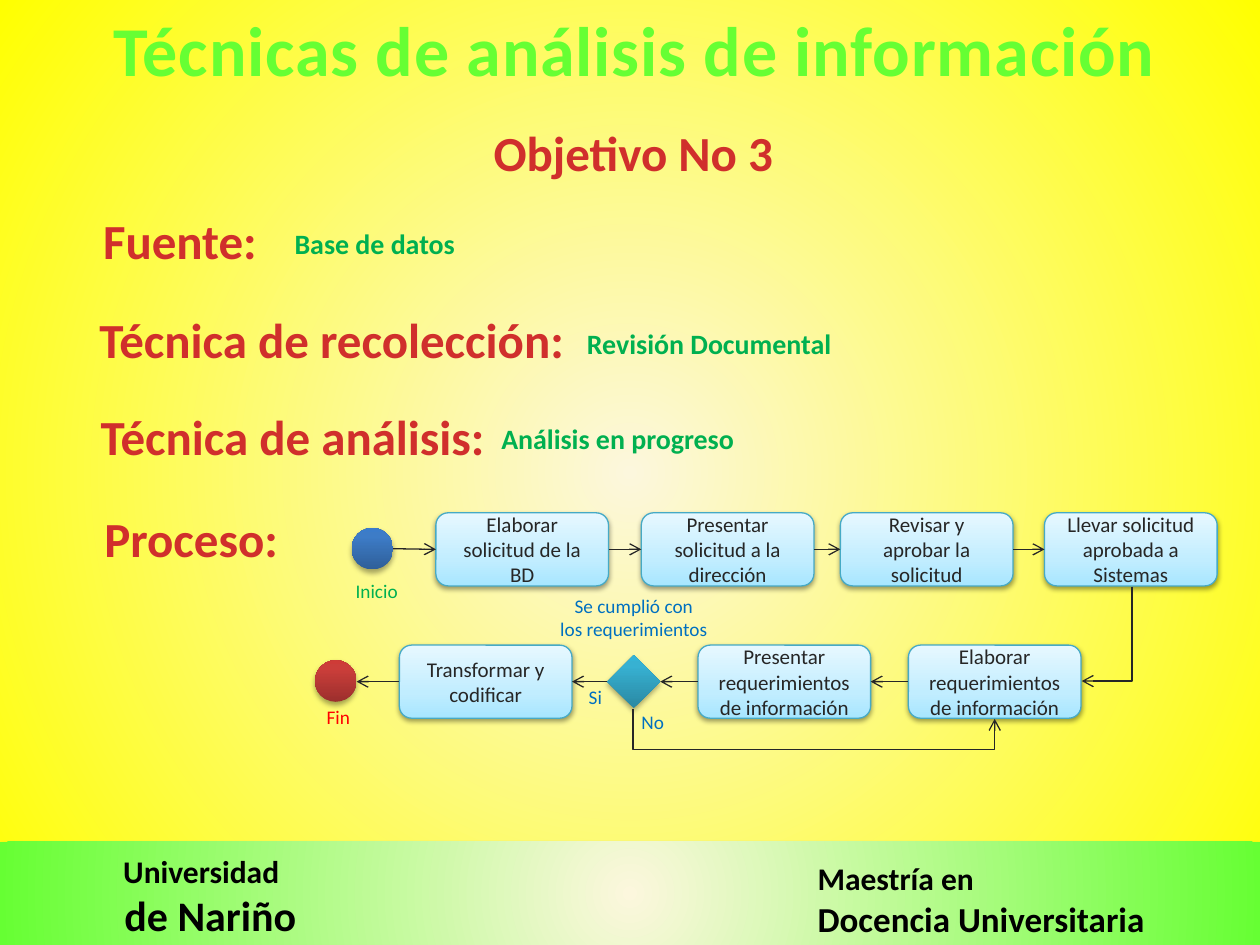
from dataclasses import dataclass

from lxml.etree import SubElement
from pptx import Presentation
from pptx.dml.color import RGBColor
from pptx.enum.shapes import MSO_CONNECTOR, MSO_SHAPE
from pptx.enum.text import MSO_ANCHOR, MSO_AUTO_SIZE, PP_ALIGN
from pptx.oxml.ns import qn
from pptx.util import Inches, Pt

WIDTH, HEIGHT = Inches(10), Inches(7.5)
COLUMNS, ROWS = 100, 75
STEP_SIZE = (13.7, 5.8)
TOP, LEFT, BOTTOM, RIGHT = range(4)


@dataclass(frozen=True)
class Theme:
    """Colours, gradients and type sizes of the slide."""
    font: str = "Calibri"
    title: str = "66FF33"
    heading: str = "D02F2C"
    answer: str = "00B050"
    note: str = "0070C0"
    end: str = "FF0000"
    footer: str = "000000"
    ink: str = "262626"
    border: str = "46AAC5"
    page: tuple = ((0, "FCF7DD"), (100, "FFFF00"))
    band: tuple = ((0, "FCF7DD"), (100, "66FF33"))
    step: tuple = ((0, "A7E6FF"), (35, "C1EDFF"), (100, "E7F8FF"))
    start_fill: tuple = ((0, "2F5F99"), (80, "3D7CC7"), (100, "3A7CCB"))
    end_fill: tuple = ((0, "9C2F2D"), (80, "CB3E3A"), (100, "CE3B37"))
    choice_fill: tuple = ((0, "2A88A2"), (80, "37B1D2"), (100, "34B4D6"))
    title_size: float = 40
    heading_size: float = 28
    name_size: float = 24
    program_size: float = 20
    lead_size: float = 18
    answer_size: float = 16
    step_size: float = 12
    note_size: float = 11
    line_width: float = 0.75


THEME = Theme()


def across(columns):
    """Turn grid columns into a length."""
    return round(WIDTH * columns / COLUMNS)


def down(rows):
    """Turn grid rows into a length."""
    return round(HEIGHT * rows / ROWS)


def frame(left, top, width, height):
    """Turn a grid area into the four lengths of a shape."""
    return across(left), down(top), across(width), down(height)


def add_color(parent, color):
    """Append an RGB colour element."""
    return SubElement(parent, qn("a:srgbClr"), val=color)


def paint_gradient(fill, parent, stops, radial=False):
    """Give a fill the stops of a radial or upward gradient."""
    fill.gradient()
    gradient = next(parent.iter(qn("a:gradFill")))
    for child in list(gradient):
        gradient.remove(child)
    stop_list = SubElement(gradient, qn("a:gsLst"))
    for position, color in stops:
        add_color(SubElement(stop_list, qn("a:gs"), pos=str(position * 1000)), color)
    if radial:
        circle = SubElement(gradient, qn("a:path"), path="circle")
        SubElement(circle, qn("a:fillToRect"), l="50000", t="50000", r="50000", b="50000")
    else:
        SubElement(gradient, qn("a:lin"), ang="16200000", scaled="0")


def cast_shadow(shape, distance, opacity):
    """Put a soft shadow below a shape."""
    shape.shadow.inherit = False
    effects = shape._element.spPr.find(qn("a:effectLst"))
    shadow = SubElement(effects, qn("a:outerShdw"), blurRad=str(Pt(3.1)),
                        dist=str(Pt(distance)), dir="5400000", rotWithShape="0")
    SubElement(add_color(shadow, "000000"), qn("a:alpha"), val=str(opacity * 1000))


def add_run(paragraph, text, size, color, bold=False):
    """Add one styled run to a paragraph."""
    run = paragraph.add_run()
    run.text = text
    run.font.name, run.font.size, run.font.bold = THEME.font, Pt(size), bold
    run.font.color.rgb = RGBColor.from_string(color)
    return run


def add_text(shapes, area, lines, color, bold=False, wrap=False):
    """Add a text box from (text, size, alignment) lines and return its runs."""
    text_frame = shapes.add_textbox(*frame(*area)).text_frame
    text_frame.word_wrap = wrap
    text_frame.auto_size = MSO_AUTO_SIZE.SHAPE_TO_FIT_TEXT
    runs = []
    for index, (text, size, alignment) in enumerate(lines):
        paragraph = text_frame.add_paragraph() if index else text_frame.paragraphs[0]
        paragraph.alignment = alignment
        runs.append(add_run(paragraph, text, size, color, bold))
    return runs


def add_note(shapes, area, color, *texts):
    """Add a small centred label of the flow chart."""
    add_text(shapes, area, [(text, THEME.note_size, PP_ALIGN.CENTER) for text in texts], color)


def add_node(shapes, kind, area, stops, radial=False, distance=1.8, opacity=35):
    """Add a borderless gradient shape with a shadow."""
    shape = shapes.add_shape(kind, *frame(*area))
    paint_gradient(shape.fill, shape._element.spPr, stops, radial)
    shape.line.fill.background()
    cast_shadow(shape, distance, opacity)
    return shape


def add_step(shapes, left, top, text):
    """Add a rounded process step."""
    shape = add_node(shapes, MSO_SHAPE.ROUNDED_RECTANGLE, (left, top, *STEP_SIZE),
                     THEME.step, distance=1.6, opacity=38)
    shape.line.color.rgb = RGBColor.from_string(THEME.border)
    shape.line.width = Pt(THEME.line_width)
    shape.text_frame.word_wrap = True
    shape.text_frame.vertical_anchor = MSO_ANCHOR.MIDDLE
    paragraph = shape.text_frame.paragraphs[0]
    paragraph.alignment = PP_ALIGN.CENTER
    add_run(paragraph, text, THEME.step_size, THEME.ink)
    return shape


def add_arrow(shapes, start, end, kind=MSO_CONNECTOR.STRAIGHT):
    """Add a thin connector with an open arrowhead at its end."""
    arrow = shapes.add_connector(kind, across(start[0]), down(start[1]),
                                 across(end[0]), down(end[1]))
    arrow.line.color.rgb = RGBColor.from_string(THEME.ink)
    arrow.line.width = Pt(THEME.line_width)
    properties = arrow._element.spPr
    SubElement(properties.find(qn("a:ln")), qn("a:tailEnd"), type="arrow")
    SubElement(properties, qn("a:effectLst"))
    return arrow


def join(shapes, source, target, source_side, target_side):
    """Join the sides of two shapes with an arrow."""
    arrow = add_arrow(shapes, (0, 0), (1, 1))
    arrow.begin_connect(source, source_side)
    arrow.end_connect(target, target_side)


def add_elbow(shapes, start, end, rotation, preset, bend=None):
    """Add a bent arrow, given by its corners before rotation."""
    properties = add_arrow(shapes, start, end, MSO_CONNECTOR.ELBOW)._element.spPr
    properties.find(qn("a:xfrm")).set("rot", str(rotation * 60000))
    geometry = properties.find(qn("a:prstGeom"))
    geometry.set("prst", preset)
    if bend:
        SubElement(geometry.find(qn("a:avLst")), qn("a:gd"), name="adj1", fmla=f"val {bend}")


def add_footer(slide):
    """Add the grouped band with the institution and the programme."""
    shapes = slide.shapes.add_group_shape().shapes
    add_node(shapes, MSO_SHAPE.RECTANGLE, (0, 66.8, 100, 8.2), THEME.band, radial=True)
    for area, *lines in (
        ((8.8, 67.1, 15.7, 8.1), ("Universidad", THEME.lead_size, PP_ALIGN.LEFT),
         ("de Nariño", THEME.name_size, PP_ALIGN.RIGHT)),
        ((63.9, 67.7, 29.1, 7.4), ("Maestría en", THEME.lead_size, PP_ALIGN.LEFT),
         ("Docencia Universitaria", THEME.program_size, PP_ALIGN.LEFT)),
    ):
        add_text(shapes, area, lines, THEME.footer, bold=True, wrap=True)


def add_headings(shapes):
    """Add the title, the subtitle and the labelled answers."""
    title, = add_text(shapes, (7.5, 0, 87.1, 7.7), [("Técnicas de análisis de información ",
                      THEME.title_size, PP_ALIGN.CENTER)], THEME.title, bold=True)
    title._r.get_or_add_rPr().set("spc", "50")
    for text, area, alignment in (
        ("Objetivo No 3", (38, 9.2, 24.5, 5.7), PP_ALIGN.CENTER),
        ("Fuente:", (7.2, 16.2, 15.3, 5.7), PP_ALIGN.LEFT),
        ("Técnica de recolección:", (6.9, 24.1, 41.1, 5.7), PP_ALIGN.LEFT),
        ("Técnica de análisis:", (7, 31.8, 35.5, 5.7), PP_ALIGN.LEFT),
        ("Proceso:", (7.3, 39.9, 15.9, 5.7), PP_ALIGN.LEFT),
    ):
        add_text(shapes, area, [(text, THEME.heading_size, alignment)], THEME.heading, bold=True)
    for text, area in (("Base de datos", (22.4, 17.5, 75.6, 3.7)),
                       ("Revisión Documental", (45.6, 25.4, 48.8, 3.7)),
                       ("Análisis en progreso", (38.8, 33, 48.8, 3.7))):
        add_text(shapes, area, [(text, THEME.answer_size, PP_ALIGN.LEFT)],
                 THEME.answer, bold=True, wrap=True)


def add_process(shapes):
    """Add the flow chart with its arrows and labels."""
    add_node(shapes, MSO_SHAPE.OVAL, (27.9, 41.9, 3.3, 3.3), THEME.start_fill)
    add_node(shapes, MSO_SHAPE.OVAL, (25, 52.4, 3.3, 3.3), THEME.end_fill)
    choice = add_node(shapes, MSO_SHAPE.DIAMOND, (48.2, 52, 4.2, 4.2), THEME.choice_fill)
    upper = [add_step(shapes, left, 40.7, text) for left, text in (
        (34.6, "Elaborar solicitud de la BD"), (50.9, "Presentar solicitud a la dirección"),
        (66.7, "Revisar y aprobar la solicitud"), (82.9, "Llevar solicitud aprobada a Sistemas"))]
    prepare, present, transform = [add_step(shapes, left, 51.2, text) for left, text in (
        (72.1, "Elaborar requerimientos de información"),
        (55.4, "Presentar requerimientos de información"), (31.7, "Transformar y codificar"))]
    for source, target in zip(upper, upper[1:]):
        join(shapes, source, target, RIGHT, LEFT)
    lower = [prepare, present, choice, transform]
    for source, target in zip(lower, lower[1:]):
        join(shapes, source, target, LEFT, RIGHT)
    add_arrow(shapes, (31.2, 43.55), (34.6, 43.6)).end_connect(upper[0], LEFT)
    add_arrow(shapes, (31.7, 54.1), (28.3, 54.1)).begin_connect(transform, LEFT)
    add_elbow(shapes, (84.1, 48.3), (91.6, 52.3), 90, "bentConnector2")
    add_elbow(shapes, (65, 42.3), (64.2, 71), 270, "bentConnector3", 407800)
    add_note(shapes, (43.4, 46.7, 13.8, 4.7), THEME.note, "Se cumplió con", "los requerimientos")
    add_note(shapes, (45.7, 53.9, 3.1, 2.9), THEME.note, "Si")
    add_note(shapes, (49.9, 55.9, 3.8, 2.9), THEME.note, "No")
    add_note(shapes, (27.2, 45.5, 5.4, 2.9), THEME.answer, "Inicio")
    add_note(shapes, (24.9, 55.5, 3.9, 2.9), THEME.end, "Fin")


def main():
    """Build the slide and save it."""
    presentation = Presentation()
    presentation.slide_width, presentation.slide_height = WIDTH, HEIGHT
    slide = presentation.slides.add_slide(presentation.slide_layouts[6])
    paint_gradient(slide.background.fill, slide._element, THEME.page, radial=True)
    add_footer(slide)
    add_headings(slide.shapes)
    add_process(slide.shapes)
    presentation.save("out.pptx")


if __name__ == "__main__":
    main()
